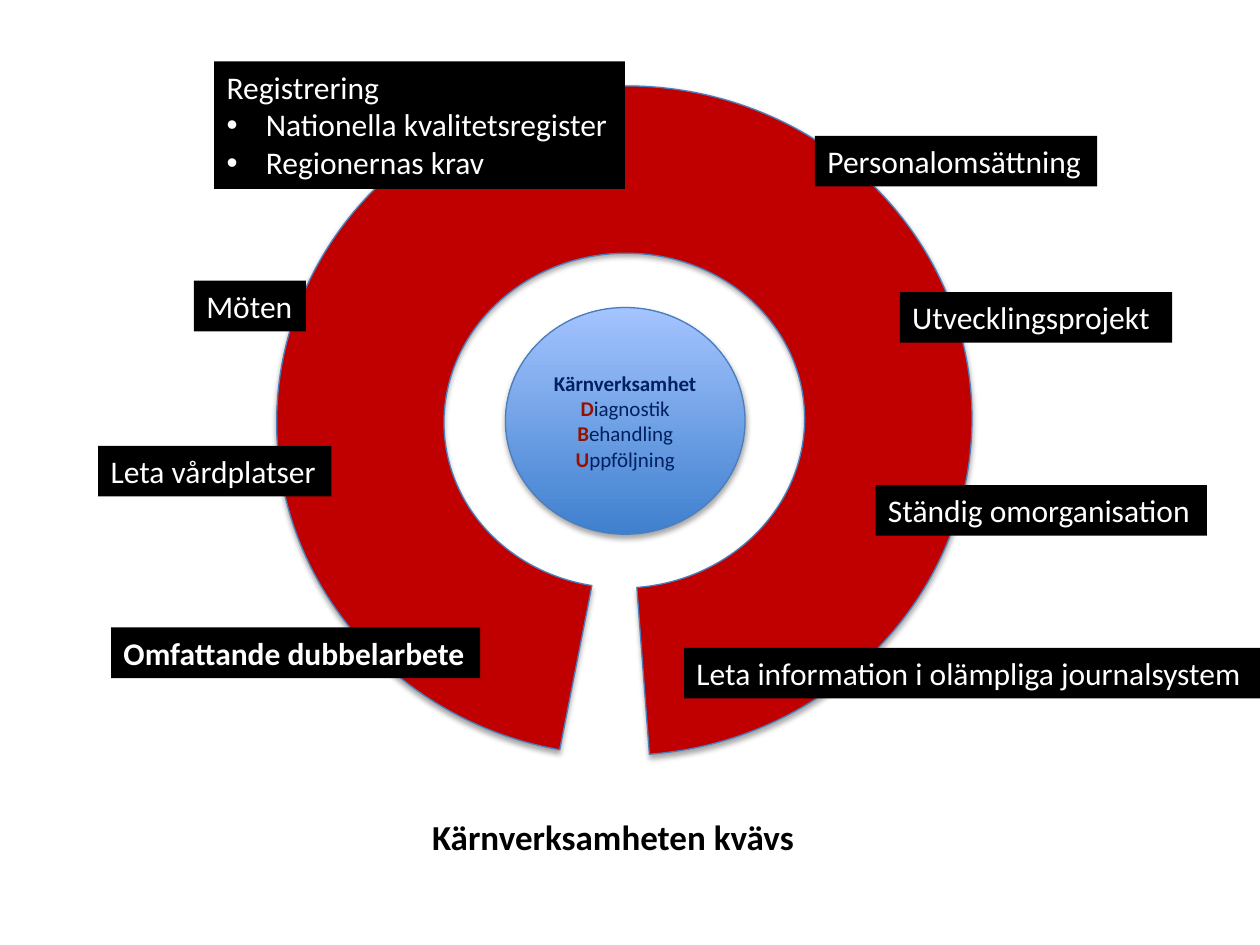
from lxml.etree import SubElement
from pptx import Presentation
from pptx.dml.color import RGBColor
from pptx.enum.shapes import MSO_SHAPE as Shape
from pptx.enum.text import MSO_ANCHOR as Anchor, MSO_AUTO_SIZE as AutoSize, PP_ALIGN as Align
from pptx.oxml.ns import qn
from pptx.util import Cm, Pt

BLACK, WHITE, RED = "000000", "FFFFFF", "C00000"
OUTLINE, NAVY, INITIAL = "4B7EBC", "002060", "941100"


def color(hex_code):
    return RGBColor.from_string(hex_code)


class SlideBuilder:
    font_name = "Calibri"
    label_size = 18
    label_height = 1.02
    bullet_indent = Cm(0.79)

    def __init__(self, slide):
        self.slide = slide

    def style(self, run, size, hex_code, bold=False):
        run.font.name = self.font_name
        run.font.size = Pt(size)
        run.font.bold = bold
        run.font.color.rgb = color(hex_code)

    def shadow(self, shape):
        shape.shadow.inherit = False
        effects = shape._element.spPr.find(qn("a:effectLst"))
        outer = SubElement(effects, qn("a:outerShdw"), blurRad=str(Pt(3.1)),
                           dist=str(Pt(1.8)), dir="5400000", rotWithShape="0")
        tint = SubElement(outer, qn("a:srgbClr"), val=BLACK)
        SubElement(tint, qn("a:alpha"), val="35000")

    def outlined(self, kind, *box):
        shape = self.slide.shapes.add_shape(kind, *map(Cm, box))
        shape.line.color.rgb = color(OUTLINE)
        shape.line.width = Pt(0.75)
        self.shadow(shape)
        return shape

    def ring(self, *box):
        ring = self.outlined(Shape.BLOCK_ARC, *box)
        for index, value in enumerate((9.243, 0, 0.25)):
            ring.adjustments[index] = value
        ring.rotation = 85.7
        ring.fill.solid()
        ring.fill.fore_color.rgb = color(RED)

    def core(self, heading, activities, *box):
        core = self.outlined(Shape.OVAL, *box)
        core.fill.gradient()
        core.fill.gradient_angle = 90
        for stop, shade in zip(core.fill.gradient_stops, ("3F80CE", "A4C4FF")):
            stop.color.rgb = color(shade)
        frame = core.text_frame
        frame.word_wrap = True
        frame.vertical_anchor = Anchor.MIDDLE
        frame.text = "\n".join([heading] + [""] * len(activities))
        for paragraph in frame.paragraphs:
            paragraph.alignment = Align.CENTER
        self.style(frame.paragraphs[0].runs[0], 12, NAVY, True)
        for paragraph, activity in zip(frame.paragraphs[1:], activities):
            for part, shade, bold in ((activity[0], INITIAL, True), (activity[1:], NAVY, False)):
                run = paragraph.add_run()
                run.text = part
                self.style(run, 12, shade, bold)

    def text(self, words, left, top, width, height, size, hex_code, bold=False, wrap=False):
        box = self.slide.shapes.add_textbox(*map(Cm, (left, top, width, height)))
        frame = box.text_frame
        frame.text = words
        frame.word_wrap = wrap
        frame.auto_size = AutoSize.SHAPE_TO_FIT_TEXT
        for paragraph in frame.paragraphs:
            for run in paragraph.runs:
                self.style(run, size, hex_code, bold)
        return box

    def label(self, words, left, top, width, height=label_height, bold=False, wrap=False):
        label = self.text(words, left, top, width, height, self.label_size, WHITE, bold, wrap)
        label.fill.solid()
        label.fill.fore_color.rgb = color(BLACK)
        for paragraph in label.text_frame.paragraphs[1:]:
            self.bullet(paragraph)

    def bullet(self, paragraph):
        properties = paragraph._p.get_or_add_pPr()
        properties.set("marL", str(self.bullet_indent))
        properties.set("indent", str(-self.bullet_indent))
        SubElement(properties, qn("a:buFont"), typeface="Arial")
        SubElement(properties, qn("a:buChar"), char="•")


def main():
    deck = Presentation()
    deck.slide_width, deck.slide_height = Cm(25.4), Cm(19.05)
    builder = SlideBuilder(deck.slides.add_slide(deck.slide_layouts[6]))

    builder.ring(5.84, 1.47, 13.49, 14.02)
    builder.text("Kärnverksamheten kvävs", 8.46, 16.31, 7.87, 1.12, 20, BLACK, bold=True)
    builder.label("Registrering\nNationella kvalitetsregister\nRegionernas krav",
                  4.32, 1.24, 8.28, 2.57)
    builder.label("Möten", 3.91, 5.66, 2.26)
    builder.label("Leta information i olämpliga journalsystem", 13.79, 13.06, 11.61)
    builder.label("Leta vårdplatser", 1.98, 8.99, 4.7)
    builder.label("Personalomsättning", 16.43, 2.74, 5.69)
    builder.label("Utvecklingsprojekt", 18.14, 5.89, 5.49, wrap=True)
    builder.label("Ständig omorganisation", 17.65, 9.78, 6.68)
    builder.label("Omfattande dubbelarbete", 2.24, 12.65, 7.44, bold=True)
    builder.core("Kärnverksamhet", ["Diagnostik", "Behandling", "Uppföljning"],
                 10.19, 6.2, 4.83, 4.57)

    deck.save("out.pptx")


if __name__ == "__main__":
    main()
